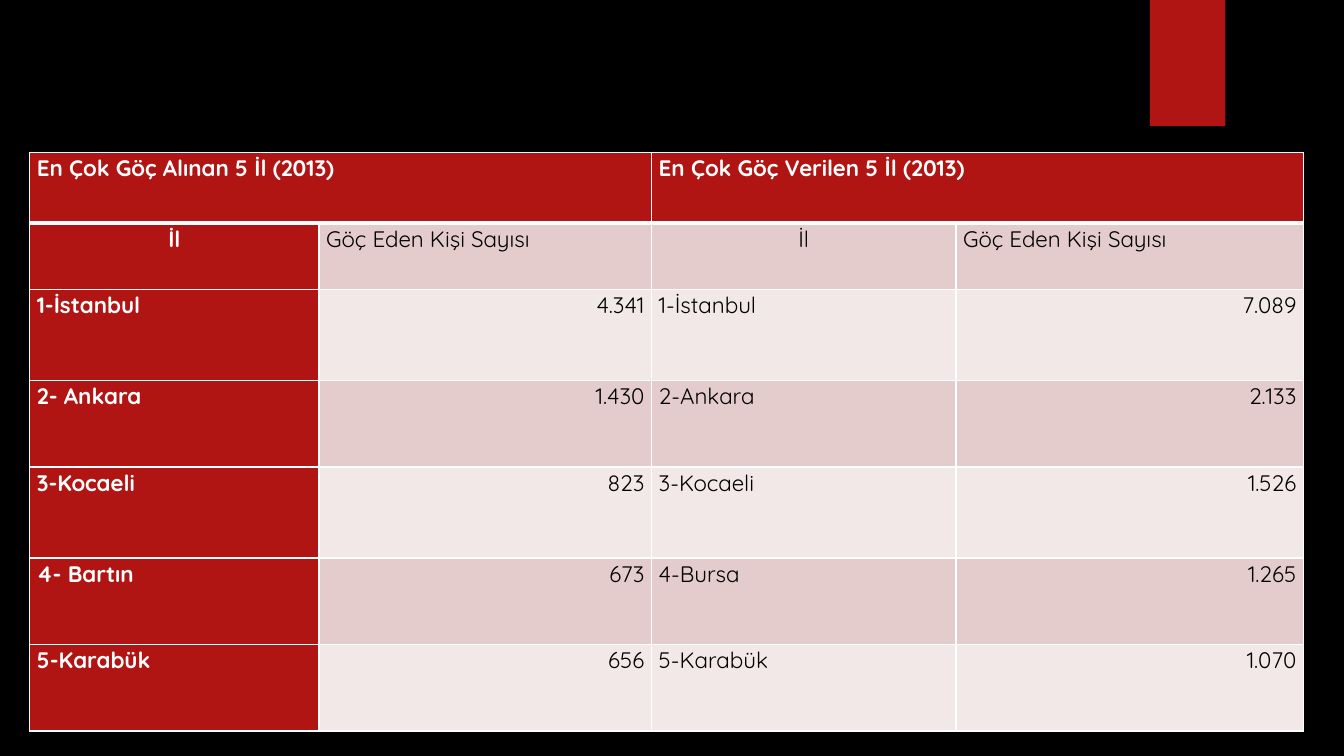
import pptx
import pptx.dml.color
import pptx.enum.shapes
import pptx.enum.text
import pptx.oxml
import pptx.oxml.ns
import pptx.util

Cm = pptx.util.Cm
RGBColor = pptx.dml.color.RGBColor
ALIGN = pptx.enum.text.PP_ALIGN

BLACK = RGBColor(0x00, 0x00, 0x00)
WHITE = RGBColor(0xFF, 0xFF, 0xFF)
RED = RGBColor(0xB0, 0x15, 0x13)
ROSE = RGBColor(0xE4, 0xCC, 0xCC)
PALE_ROSE = RGBColor(0xF2, 0xE8, 0xE7)

COLUMN_WIDTHS = [7.29, 8.38, 7.67, 8.76]
ROW_HEIGHTS = [1.78, 1.68, 2.29, 2.18, 2.29, 2.18, 2.18]
ROWS = [
    ["En Çok Göç Alınan 5 İl (2013)", "", "En Çok Göç Verilen 5 İl (2013)", ""],
    ["İl", "Göç Eden Kişi Sayısı", "İl", "Göç Eden Kişi Sayısı"],
    ["1-İstanbul", "4.341", "1-İstanbul", "7.089"],
    ["2- Ankara", "1.430", "2-Ankara", "2.133"],
    ["3-Kocaeli", "823", "3-Kocaeli", "1.526"],
    ["4- Bartın", "673", "4-Bursa", "1.265"],
    ["5-Karabük", "656", "5-Karabük", "1.070"],
]
CELL_FORMAT = {
    "margin_left": Cm(0.18),
    "margin_right": Cm(0.18),
    "margin_top": Cm(0),
    "margin_bottom": Cm(0),
}


def set_attributes(target, values):
    for name, value in values.items():
        setattr(target, name, value)


def add_ribbon(slide):
    shape = slide.shapes.add_shape(
        pptx.enum.shapes.MSO_SHAPE.RECTANGLE, Cm(28.98), Cm(0), Cm(1.9), Cm(3.18))
    shape.shadow.inherit = False
    shape.fill.solid()
    shape.fill.fore_color.rgb = RED
    shape.line.fill.background()


def add_borders(cell, widths):
    properties = cell._tc.get_or_add_tcPr()
    for side, width in widths.items():
        properties.append(pptx.oxml.parse_xml(
            f'<a:ln{side} {pptx.oxml.ns.nsdecls("a")} w="{pptx.util.Pt(width)}">'
            f'<a:solidFill><a:srgbClr val="{WHITE}"/></a:solidFill></a:ln{side}>'))


def cell_alignment(row, column):
    if row == 0:
        return ALIGN.JUSTIFY
    if row == 1:
        return ALIGN.JUSTIFY if column % 2 else ALIGN.CENTER
    return ALIGN.RIGHT if column % 2 else ALIGN.LEFT


def format_cell(cell, text, row, column):
    heading = row == 0 or column == 0
    add_borders(cell, {"L": 1, "R": 1, "T": 3 if row == 1 else 1, "B": 3 if row == 0 else 1})
    set_attributes(cell, CELL_FORMAT)
    cell.fill.solid()
    cell.fill.fore_color.rgb = RED if heading else (ROSE if row % 2 else PALE_ROSE)
    if not text:
        return
    cell.text = text
    paragraph = cell.text_frame.paragraphs[0]
    set_attributes(paragraph, {"alignment": cell_alignment(row, column), "line_spacing": 1.07})
    font = paragraph.runs[0].font
    set_attributes(font, {"name": "Quicksand", "size": pptx.util.Pt(16), "bold": heading})
    font.color.rgb = WHITE if heading else BLACK


def add_migration_table(slide):
    table = slide.shapes.add_table(
        len(ROWS), len(COLUMN_WIDTHS), Cm(0.75), Cm(3.84),
        Cm(sum(COLUMN_WIDTHS)), Cm(sum(ROW_HEIGHTS))).table
    set_attributes(table, {"first_row": True, "first_col": True, "horz_banding": False})
    for column, width in zip(table.columns, COLUMN_WIDTHS):
        column.width = Cm(width)
    for row, height in zip(table.rows, ROW_HEIGHTS):
        row.height = Cm(height)
    for row, texts in enumerate(ROWS):
        for column, text in enumerate(texts):
            format_cell(table.cell(row, column), text, row, column)
    for column in (0, 2):
        table.cell(0, column).merge(table.cell(0, column + 1))


def main():
    presentation = pptx.Presentation()
    set_attributes(presentation, {"slide_width": Cm(33.87), "slide_height": Cm(19.05)})
    slide = presentation.slides.add_slide(presentation.slide_layouts[6])
    slide.background.fill.solid()
    slide.background.fill.fore_color.rgb = BLACK
    add_ribbon(slide)
    add_migration_table(slide)
    presentation.save("out.pptx")


if __name__ == "__main__":
    main()
